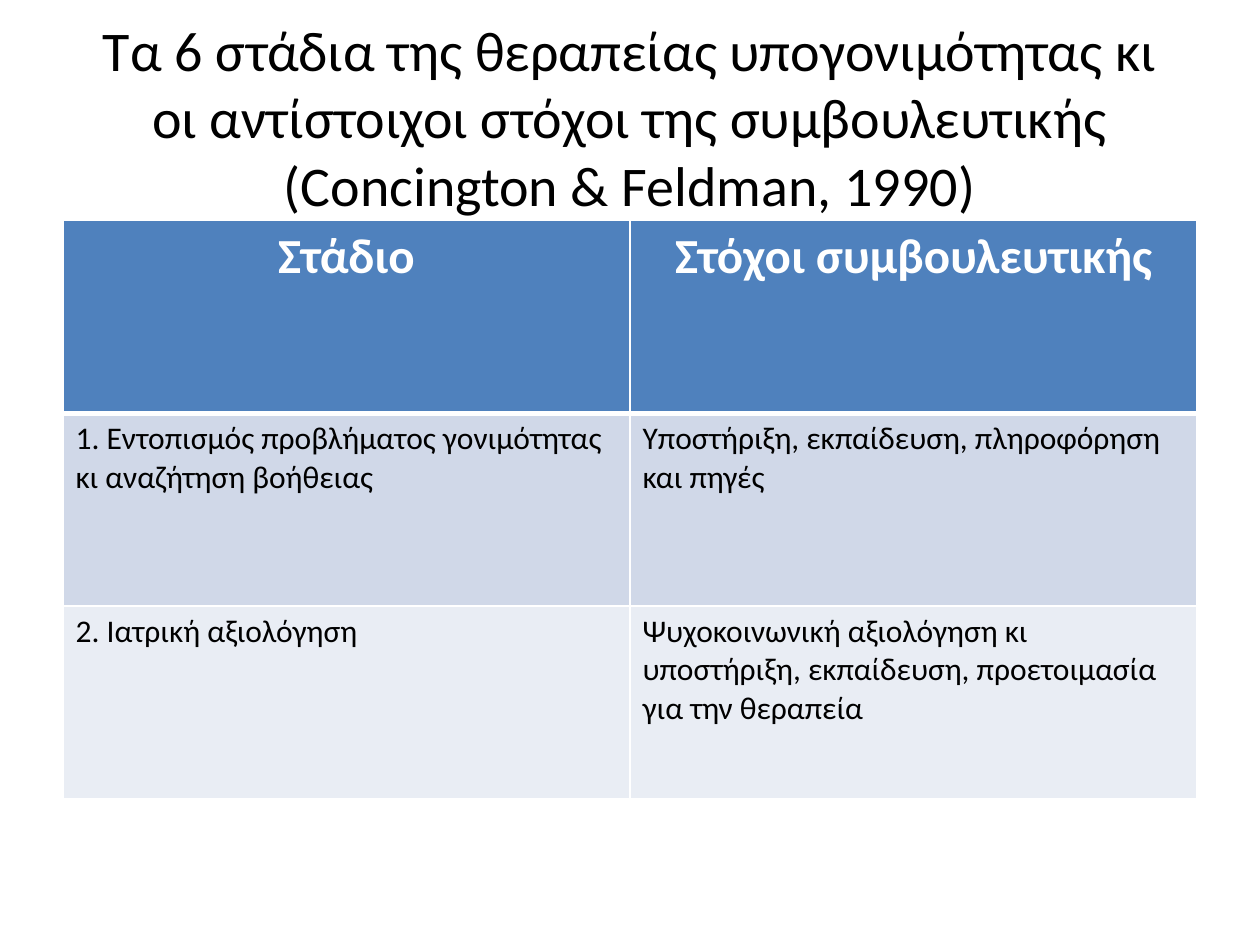
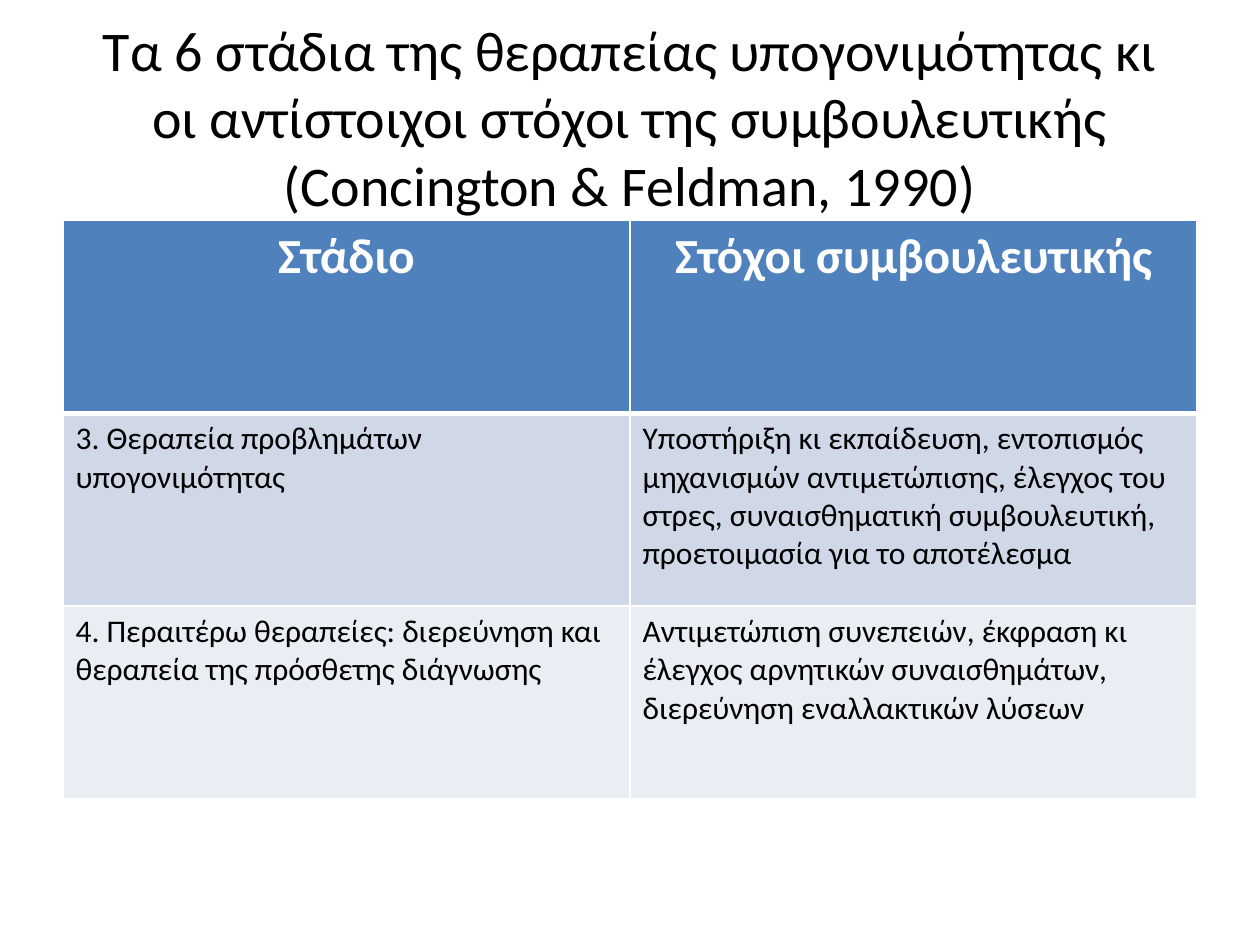
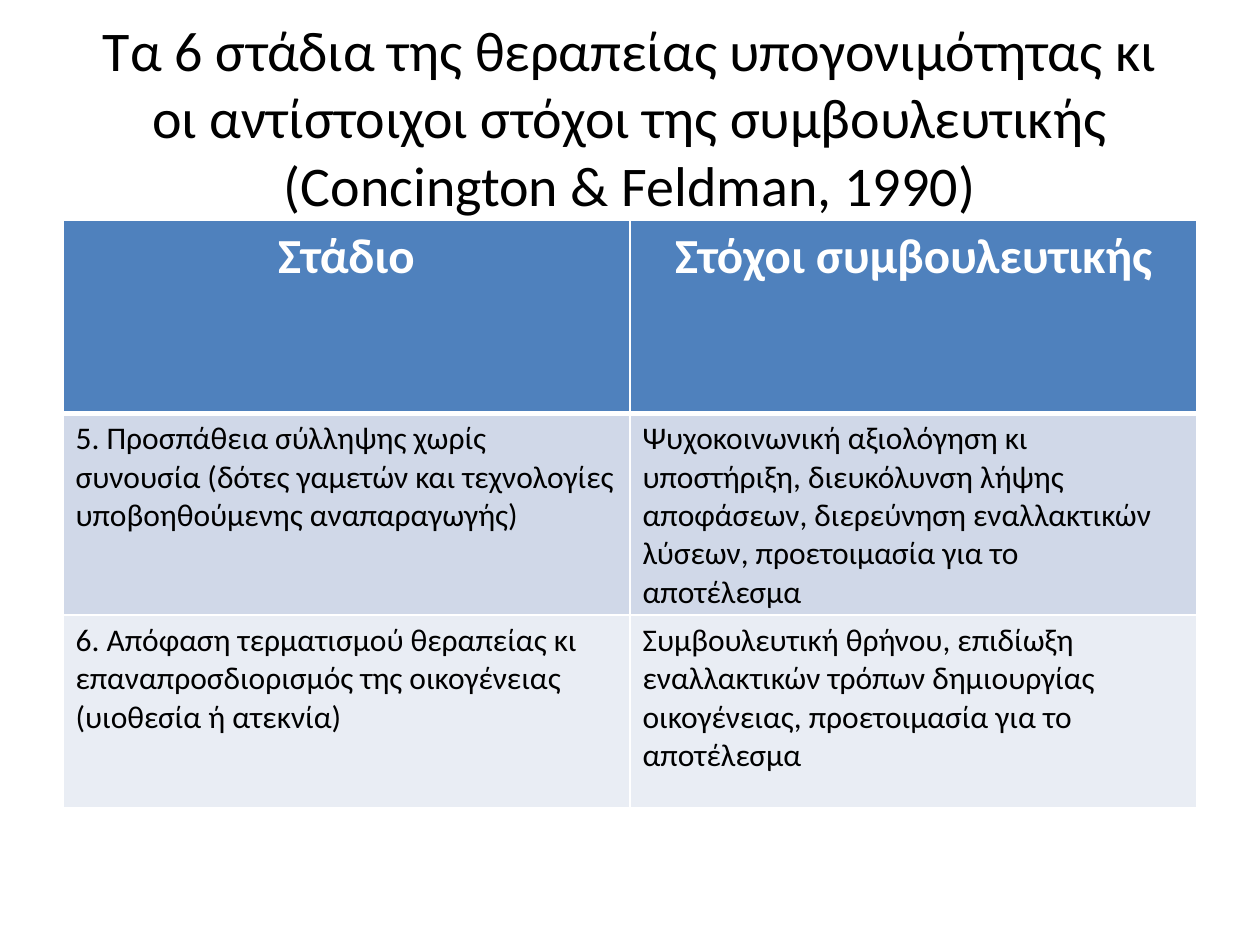
from dataclasses import dataclass

from lxml import etree
from pptx import Presentation
from pptx.dml.color import RGBColor
from pptx.enum import text
from pptx.oxml import ns
from pptx.util import Inches, Pt

FONT = "Calibri"
COLORS = {
    "title": "000000",
    "header_fill": "4F81BD",
    "header_text": "FFFFFF",
    "body_text": "000000",
    "odd_row": "D0D8E8",
    "even_row": "E9EDF4",
    "border": "FFFFFF",
}
FORMATS = {
    "title": {"name": FONT, "size": Pt(32), "bold": False},
    "header": {"name": FONT, "size": Pt(28), "bold": True},
    "body": {"name": FONT, "size": Pt(18), "bold": False},
}

TITLE_LINES = (
    "Τα 6 στάδια της θεραπείας υπογονιμότητας κι οι αντίστοιχοι στόχοι της συμβουλευτικής",
    "(Concington & Feldman, 1990)",
)
HEADINGS = ("Στάδιο", "Στόχοι συμβουλευτικής")

LEFT, CONTENT_WIDTH = Inches(0.5), Inches(9)
TITLE_TOP, TITLE_HEIGHT = Inches(0.3), Inches(1.25)
TABLE_TOP, ROW_HEIGHT = Inches(1.75), Inches(1.53)
THIN, THICK = Pt(1), Pt(3)


@dataclass(frozen=True)
class Stage:
    name: str
    goals: str


STAGE_PAIRS = (
    (
        Stage("1. Εντοπισμός προβλήματος γονιμότητας κι αναζήτηση βοήθειας",
              "Υποστήριξη, εκπαίδευση, πληροφόρηση και πηγές"),
        Stage("2. Ιατρική αξιολόγηση",
              "Ψυχοκοινωνική αξιολόγηση κι υποστήριξη, εκπαίδευση, "
              "προετοιμασία για την θεραπεία"),
    ),
    (
        Stage("3. Θεραπεία προβλημάτων υπογονιμότητας",
              "Υποστήριξη κι εκπαίδευση, εντοπισμός μηχανισμών αντιμετώπισης, "
              "έλεγχος του στρες, συναισθηματική συμβουλευτική, "
              "προετοιμασία για το αποτέλεσμα"),
        Stage("4. Περαιτέρω θεραπείες: διερεύνηση και θεραπεία της πρόσθετης διάγνωσης",
              "Αντιμετώπιση συνεπειών, έκφραση κι έλεγχος αρνητικών συναισθημάτων, "
              "διερεύνηση εναλλακτικών λύσεων"),
    ),
    (
        Stage("5. Προσπάθεια σύλληψης χωρίς συνουσία (δότες γαμετών και τεχνολογίες "
              "υποβοηθούμενης αναπαραγωγής)",
              "Ψυχοκοινωνική αξιολόγηση κι υποστήριξη, διευκόλυνση λήψης αποφάσεων, "
              "διερεύνηση εναλλακτικών λύσεων, προετοιμασία για το αποτέλεσμα"),
        Stage("6. Απόφαση τερματισμού θεραπείας κι επαναπροσδιορισμός της οικογένειας "
              "(υιοθεσία ή ατεκνία)",
              "Συμβουλευτική θρήνου, επιδίωξη εναλλακτικών τρόπων δημιουργίας "
              "οικογένειας, προετοιμασία για το αποτέλεσμα"),
    ),
)


def add_run(paragraph, words: str, style: str, color: str) -> None:
    run = paragraph.add_run()
    run.text = words
    for attribute, value in FORMATS[style].items():
        setattr(run.font, attribute, value)
    run.font.color.rgb = RGBColor.from_string(COLORS[color])


def add_title(slide) -> None:
    frame = slide.shapes.add_textbox(
        LEFT, TITLE_TOP, CONTENT_WIDTH, TITLE_HEIGHT).text_frame
    frame.word_wrap = True
    frame.vertical_anchor = text.MSO_ANCHOR.MIDDLE
    paragraph = frame.paragraphs[0]
    paragraph.alignment = text.PP_ALIGN.CENTER
    main_line, citation = TITLE_LINES
    add_run(paragraph, main_line, "title", "title")
    paragraph.add_line_break()
    add_run(paragraph, citation, "title", "title")


def set_borders(cell, top: int, bottom: int) -> None:
    properties = cell._tc.get_or_add_tcPr()
    widths = {"lnL": THIN, "lnR": THIN, "lnT": top, "lnB": bottom}
    for side, width in widths.items():
        line = etree.SubElement(properties, ns.qn(f"a:{side}"), w=str(width))
        fill = etree.SubElement(line, ns.qn("a:solidFill"))
        etree.SubElement(fill, ns.qn("a:srgbClr"), val=COLORS["border"])


def fill_cell(cell, words: str, row: int) -> None:
    is_header = row == 0
    style = "header" if is_header else "body"
    paragraph = cell.text_frame.paragraphs[0]
    if is_header:
        paragraph.alignment = text.PP_ALIGN.CENTER
    add_run(paragraph, words, style, f"{style}_text")
    set_borders(cell, top=THICK if row == 1 else THIN,
                bottom=THICK if is_header else THIN)
    background = "header_fill" if is_header else "odd_row" if row % 2 else "even_row"
    cell.fill.solid()
    cell.fill.fore_color.rgb = RGBColor.from_string(COLORS[background])


def add_stage_table(slide, stages: tuple[Stage, ...]) -> None:
    rows = [HEADINGS, *((stage.name, stage.goals) for stage in stages)]
    table = slide.shapes.add_table(
        len(rows), len(HEADINGS), LEFT, TABLE_TOP,
        CONTENT_WIDTH, ROW_HEIGHT * len(rows)).table
    for row, entries in enumerate(rows):
        for column, words in enumerate(entries):
            fill_cell(table.cell(row, column), words, row)


def main() -> None:
    deck = Presentation()
    deck.slide_width, deck.slide_height = Inches(10), Inches(7.5)
    blank = deck.slide_layouts[6]
    for stages in STAGE_PAIRS:
        slide = deck.slides.add_slide(blank)
        add_title(slide)
        add_stage_table(slide, stages)
    deck.save("out.pptx")


if __name__ == "__main__":
    main()
